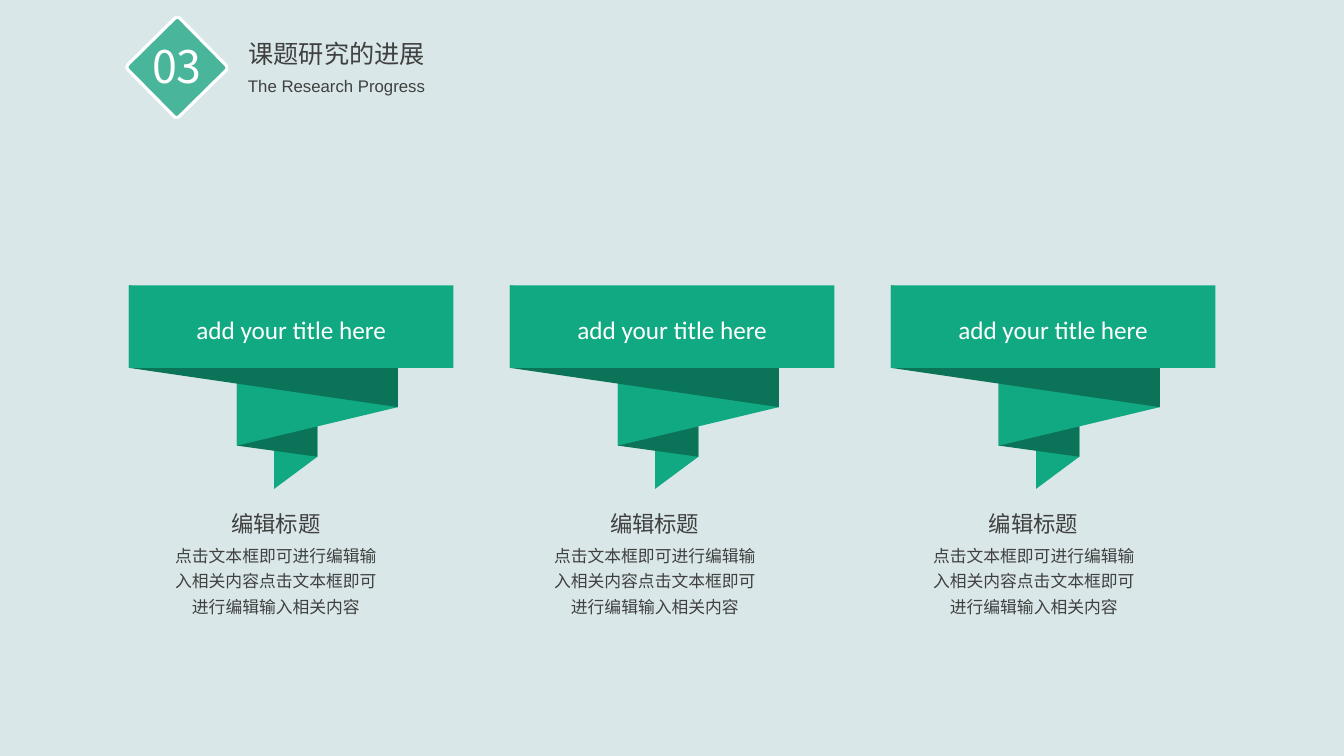
from dataclasses import dataclass

from lxml.etree import SubElement
from pptx import Presentation
from pptx.dml.color import RGBColor
from pptx.enum.shapes import MSO_SHAPE
from pptx.enum.text import MSO_ANCHOR, MSO_AUTO_SIZE, PP_ALIGN
from pptx.oxml.ns import qn
from pptx.shapes.autoshape import Shape
from pptx.slide import Slide
from pptx.util import Cm, Pt

BACKGROUND = "D9E7E8"
GREEN = "10A981"
DARK_GREEN = "0B7358"
LIGHT_GREEN = "49B59A"
WHITE = "FFFFFF"
GREY = "404040"
CHINESE_FONT = "Noto Sans CJK SC"

COLUMN_COUNT = 3
RIBBON_LEFT, RIBBON_TOP, RIBBON_PITCH = 3.25, 7.19, 9.6
CAPTION_LEFT, CAPTION_PITCH = 4.06, 9.55
BANNER_WIDTH, BANNER_HEIGHT = 8.18, 2.08


@dataclass(frozen=True)
class Box:
    """A rectangle in centimetres."""
    left: float
    top: float
    width: float
    height: float


@dataclass(frozen=True)
class TextStyle:
    size: int
    font: str
    color: str
    line_spacing: int | None = None


@dataclass(frozen=True)
class Fold:
    """One piece of the ribbon, in centimetres from the banner's corner."""
    points: tuple[tuple[float, float], ...]
    color: str


NUMBER = TextStyle(32, CHINESE_FONT, WHITE)
TITLE = TextStyle(18, CHINESE_FONT, GREY)
SUBTITLE = TextStyle(12, "Arial", GREY)
BANNER = TextStyle(18, "Calibri", WHITE)
HEADING = TextStyle(16, CHINESE_FONT, GREY)
DESCRIPTION = TextStyle(12, CHINESE_FONT, GREY, line_spacing=18)

FOLDS = (
    Fold(((4.75, 3.56), (4.75, 4.32), (3.66, 5.13), (3.66, 4.04)), GREEN),
    Fold(((4.75, 3.07), (4.75, 4.32), (2.72, 4.04), (2.72, 2.49)), DARK_GREEN),
    Fold(((6.78, 2.08), (6.78, 3.07), (2.72, 4.04), (2.72, 1.12)), GREEN),
    Fold(((6.78, 3.07), (0, 2.08), (0, 0), (6.78, 1.12)), DARK_GREEN),
)


def rgb(color: str) -> RGBColor:
    return RGBColor.from_string(color)


def paint(shape: Shape, color: str) -> None:
    """Give a flat fill without outline or shadow."""
    shape.shadow.inherit = False
    shape.fill.solid()
    shape.fill.fore_color.rgb = rgb(color)
    shape.line.fill.background()


def place(shape: Shape, box: Box) -> None:
    shape.left, shape.top = Cm(box.left), Cm(box.top)
    shape.width, shape.height = Cm(box.width), Cm(box.height)


def write(shape: Shape, text: str, style: TextStyle) -> None:
    frame = shape.text_frame
    frame.word_wrap = True
    frame.auto_size = MSO_AUTO_SIZE.NONE
    frame.vertical_anchor = MSO_ANCHOR.MIDDLE
    paragraph = frame.paragraphs[0]
    paragraph.alignment = PP_ALIGN.CENTER
    if style.line_spacing is not None:
        paragraph.line_spacing = Pt(style.line_spacing)
    run = paragraph.add_run()
    run.text = text
    run.font.size = Pt(style.size)
    run.font.color.rgb = rgb(style.color)
    run.font.name = style.font
    east_asian = SubElement(run.font._element, qn("a:ea"))
    east_asian.set("typeface", style.font)


def add_text(slide: Slide, box: Box, text: str, style: TextStyle) -> None:
    text_box = slide.shapes.add_textbox(0, 0, 0, 0)
    place(text_box, box)
    write(text_box, text, style)


def add_box(slide: Slide, kind: MSO_SHAPE, box: Box, color: str) -> Shape:
    shape = slide.shapes.add_shape(kind, 0, 0, 0, 0)
    place(shape, box)
    paint(shape, color)
    return shape


def add_diamond(slide: Slide, box: Box, color: str) -> Shape:
    diamond = add_box(slide, MSO_SHAPE.ROUNDED_RECTANGLE, box, color)
    diamond.adjustments[0] = 0.05
    diamond.rotation = 45.4
    return diamond


def add_header(slide: Slide) -> None:
    add_diamond(slide, Box(3.53, 0.76, 1.88, 1.88), GREEN)
    framed = add_diamond(slide, Box(3.54, 0.78, 1.84, 1.84), LIGHT_GREEN)
    framed.line.color.rgb = rgb(WHITE)
    framed.line.width = Pt(2.25)
    add_text(slide, Box(3.48, 0.84, 1.96, 1.63), "03", NUMBER)

    title = slide.shapes.title
    place(title, Box(1.6, 0.84, 13.77, 1.02))
    write(title, "课题研究的进展", TITLE)
    add_text(slide, Box(1.6, 1.78, 13.77, 0.76), "The Research Progress", SUBTITLE)


def add_ribbon(slide: Slide, left: float) -> None:
    for fold in FOLDS:
        corners = [(Cm(left + x), Cm(RIBBON_TOP + y)) for x, y in fold.points]
        builder = slide.shapes.build_freeform(*corners[0])
        builder.add_line_segments(corners[1:], close=True)
        paint(builder.convert_to_shape(), fold.color)
    banner = Box(left, RIBBON_TOP, BANNER_WIDTH, BANNER_HEIGHT)
    add_box(slide, MSO_SHAPE.RECTANGLE, banner, GREEN)
    add_text(slide, Box(left, 7.77, BANNER_WIDTH, 1.04), "add your title here", BANNER)


def add_caption(slide: Slide, left: float) -> None:
    add_text(slide, Box(left, 13.49, 5.79, 2.18),
             "点击文本框即可进行编辑输入相关内容点击文本框即可进行编辑输入相关内容",
             DESCRIPTION)
    add_text(slide, Box(left + 1.1, 12.73, 3.58, 0.94), "编辑标题", HEADING)


def main() -> None:
    presentation = Presentation()
    presentation.slide_width, presentation.slide_height = Cm(33.87), Cm(19.05)
    slide = presentation.slides.add_slide(presentation.slide_layouts[5])
    slide.background.fill.solid()
    slide.background.fill.fore_color.rgb = rgb(BACKGROUND)

    add_header(slide)
    for column in range(COLUMN_COUNT):
        add_ribbon(slide, RIBBON_LEFT + column * RIBBON_PITCH)
        add_caption(slide, CAPTION_LEFT + column * CAPTION_PITCH)
    presentation.save("out.pptx")


if __name__ == "__main__":
    main()
